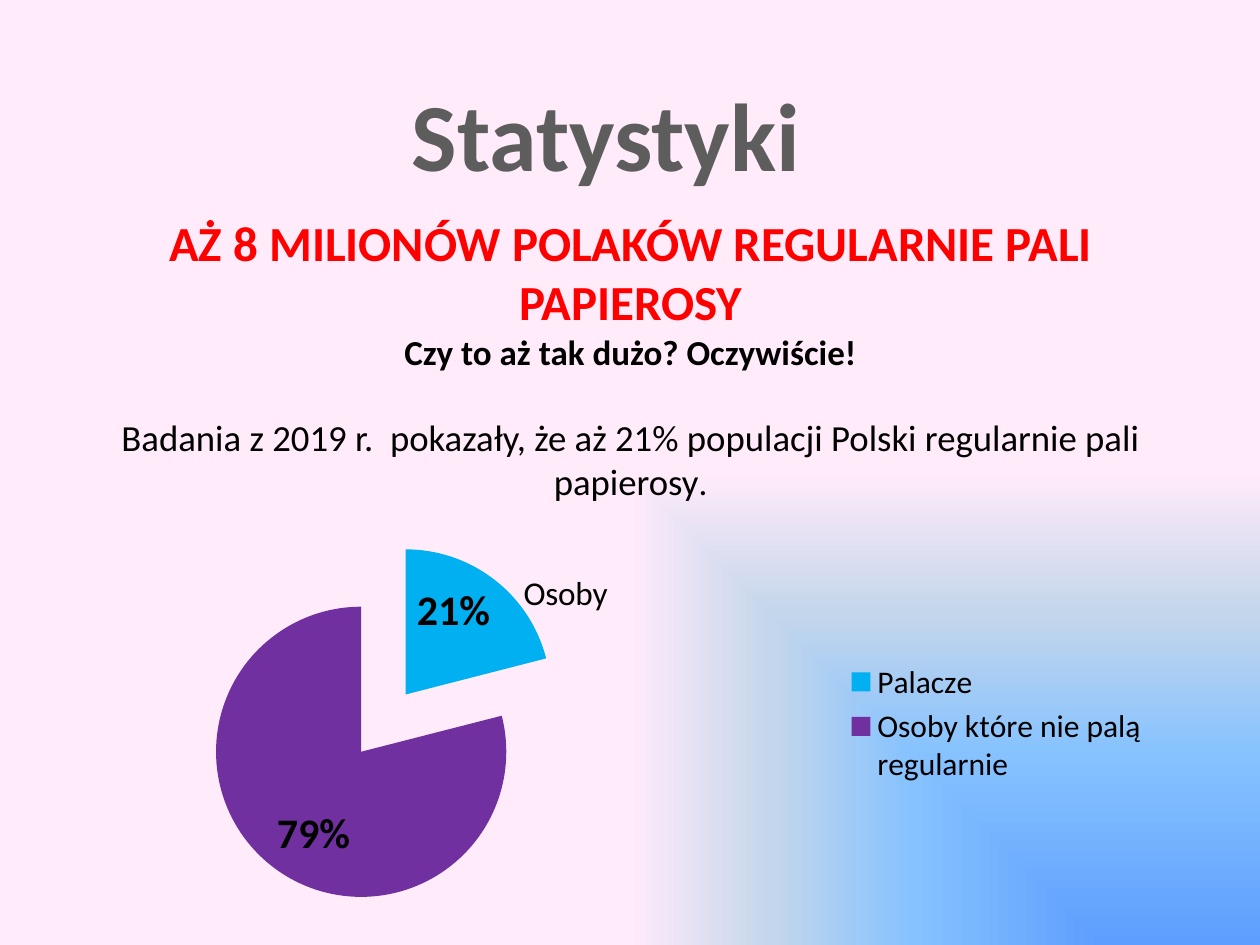
from dataclasses import dataclass

from lxml import etree
from pptx import Presentation
from pptx.chart.data import CategoryChartData
from pptx.dml.color import RGBColor
from pptx.enum.chart import (XL_CHART_TYPE as ChartType, XL_LABEL_POSITION as LabelPos,
                             XL_LEGEND_POSITION as LegendPos)
from pptx.enum.text import MSO_AUTO_SIZE as AutoSize, PP_ALIGN as Align
from pptx.oxml import parse_xml
from pptx.oxml.ns import nsdecls, qn
from pptx.util import Inches, Pt


@dataclass(frozen=True)
class Theme:
    font: str = "Calibri"
    heading: str = "5D5D5D"
    alert: str = "FF0000"
    ink: str = "000000"
    slices: tuple = ("00B0F0", "7030A0")
    backdrop: tuple = ((0, "5E9EFF"), (40, "85C2FF"), (70, "C4D6EB"), (100, "FFEBFA"))
    title: int = 55
    claim: int = 28
    question: int = 20
    body: int = 21
    chart: int = 18
    chart_title: int = 19
    label: int = 24


class Deck:
    def __init__(self, prs, theme):
        self.theme = theme
        self.s = prs.slides.add_slide(prs.slide_layouts[6])

    def style(self, font, size, color=None, bold=False):
        font.name, font.size, font.bold = self.theme.font, Pt(size), bold
        font.color.rgb = RGBColor.from_string(color or self.theme.ink)

    def background(self):
        """Rectangular gradient that spreads from the bottom right corner."""
        stops = "".join(f'<a:gs pos="{pos * 1000}"><a:srgbClr val="{color}"/></a:gs>'
                        for pos, color in self.theme.backdrop)
        bg = parse_xml(
            f'<p:bg {nsdecls("p", "a")}><p:bgPr><a:gradFill rotWithShape="1">'
            f'<a:gsLst>{stops}</a:gsLst><a:path path="rect">'
            '<a:fillToRect l="100000" t="100000"/></a:path></a:gradFill>'
            '<a:effectLst/></p:bgPr></p:bg>')
        self.s.element.find(qn("p:cSld")).insert(0, bg)

    def text(self, box, paragraphs, wrap=True):
        """Each paragraph is (space before in points, [(text, size, color, bold)])."""
        tf = self.s.shapes.add_textbox(*map(Inches, box)).text_frame
        tf.word_wrap, tf.auto_size = wrap, AutoSize.SHAPE_TO_FIT_TEXT
        for i, (space, runs) in enumerate(paragraphs):
            p = tf.add_paragraph() if i else tf.paragraphs[0]
            p.alignment, p.space_before = Align.CENTER, Pt(space)
            for text, *look in runs:
                r = p.add_run()
                r.text = text
                self.style(r.font, *look)

    def layout(self, parent, index, inner=False, **place):
        """Set a manual position, in fractions of the chart."""
        for old in parent.findall(qn("c:layout")):
            parent.remove(old)
        layout = etree.Element(qn("c:layout"))
        manual = etree.SubElement(layout, qn("c:manualLayout"))
        target = {"layoutTarget": "inner"} if inner else {}
        modes = {"xMode": "edge", "yMode": "edge"}
        for tag, val in {**target, **modes, **place}.items():
            etree.SubElement(manual, qn(f"c:{tag}")).set("val", str(val))
        parent.insert(index, layout)

    def pie(self, box, name, values, explosion):
        t = self.theme
        data = CategoryChartData()
        data.categories = list(values)
        data.add_series(name, list(values.values()))
        chart = self.s.shapes.add_chart(ChartType.PIE, *map(Inches, box), data).chart
        self.style(chart.font, t.chart)

        # Title and plot placement
        chart.has_title = True
        r = chart.chart_title.text_frame.paragraphs[0].add_run()
        r.text = name
        self.style(r.font, t.chart_title)
        self.layout(chart.chart_title._element, 1, x=0.4, y=0.06)
        plot = chart.plots[0]
        self.layout(plot._element.getparent(), 0, inner=True, x=0.04, y=0, w=0.47, h=1)

        # Legend
        chart.has_legend = True
        chart.legend.position = LegendPos.RIGHT
        chart.legend.include_in_layout = False

        # Slices
        series = plot.series[0]
        for i, color in enumerate(t.slices):
            fill = series.points[i].format.fill
            fill.solid()
            fill.fore_color.rgb = RGBColor.from_string(color)
        burst = etree.Element(qn("c:explosion"), val=str(explosion))
        series._element.find(qn("c:dPt")).addprevious(burst)

        # Percent labels
        labels = series.data_labels
        labels.show_percentage, labels.show_value = True, False
        labels.position = LabelPos.INSIDE_END
        self.style(labels.font, t.label, bold=True)


def main():
    prs = Presentation()
    prs.slide_width, prs.slide_height = Inches(10), Inches(7.5)
    t = Theme()
    deck = Deck(prs, t)
    deck.background()

    # Heading
    deck.text((3.12, 0.55, 3.55, 1.04),
              [(0, [("Statystyki ", t.title, t.heading, True)])], wrap=False)

    # Message
    deck.text((0.55, 1.64, 8.91, 2.42), [
        (0, [("AŻ 8 MILIONÓW POLAKÓW REGULARNIE PALI PAPIEROSY", t.claim, t.alert, True)]),
        (0, [("Czy to aż tak dużo? Oczywiście!", t.question, t.ink, True)]),
        (24, [("Badania z 2019 r.  pokazały, że aż 21% populacji Polski regularnie pali "
               "papierosy", t.body, t.ink, False),
              (".", t.question, t.ink, False)]),
    ])

    # Share of smokers
    deck.pie((0.7, 4.3, 8.52, 2.88), "Osoby",
             {"Palacze": 21, "Osoby które nie palą regularnie": 79}, explosion=25)
    prs.save("out.pptx")


if __name__ == "__main__":
    main()
